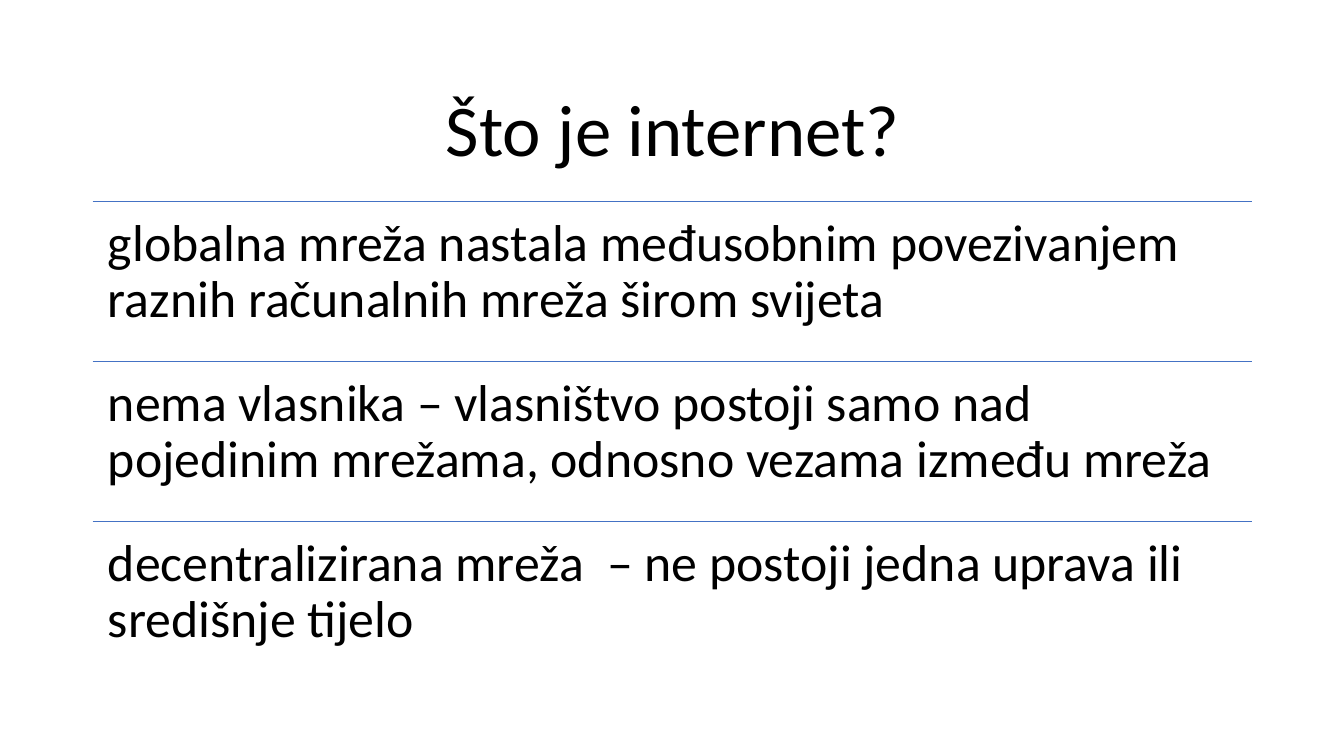
from lxml.etree import SubElement
from pptx import Presentation
from pptx.dml.color import RGBColor
from pptx.enum.shapes import MSO_CONNECTOR
from pptx.enum.text import MSO_ANCHOR, MSO_AUTO_SIZE, PP_ALIGN
from pptx.oxml.ns import qn
from pptx.util import Inches, Pt

FONT = "Calibri"
TEXT_COLOR = "000000"
RULE_COLOR = "4472C4"
LEFT, WIDTH = 0.92, 11.5

STATEMENTS = [
    "globalna mreža nastala međusobnim povezivanjem raznih računalnih mreža širom svijeta",
    "nema vlasnika – vlasništvo postoji samo nad pojedinim mrežama, odnosno vezama između mreža",
    "decentralizirana mreža  – ne postoji jedna uprava ili središnje tijelo",
]


def color(hex_string):
    return RGBColor.from_string(hex_string)


def format_paragraph(paragraph, size, alignment):
    paragraph.alignment = alignment
    paragraph.line_spacing = 0.9
    paragraph.font.name = FONT
    paragraph.font.size = Pt(size)
    paragraph.font.color.rgb = color(TEXT_COLOR)


def add_title(slide, text, left, top, width, height):
    title = slide.shapes.title
    title.left, title.top = Inches(left), Inches(top)
    title.width, title.height = Inches(width), Inches(height)
    frame = title.text_frame
    frame.text = text
    frame.auto_size = MSO_AUTO_SIZE.NONE
    frame.vertical_anchor = MSO_ANCHOR.MIDDLE
    format_paragraph(frame.paragraphs[0], 52, PP_ALIGN.CENTER)


def add_rule(slide, left, top, width):
    rule = slide.shapes.add_connector(
        MSO_CONNECTOR.STRAIGHT,
        Inches(left), Inches(top), Inches(left + width), Inches(top))
    rule.line.color.rgb = color(RULE_COLOR)
    rule.line.width = Pt(1)
    SubElement(rule._element.spPr, qn("a:effectLst"))


def add_statement(slide, text, left, top, width, height):
    box = slide.shapes.add_textbox(
        Inches(left), Inches(top), Inches(width), Inches(height))
    frame = box.text_frame
    frame.word_wrap = True
    frame.margin_left = frame.margin_right = Inches(0.15)
    frame.margin_top = frame.margin_bottom = Inches(0.15)
    frame.text = text
    format_paragraph(frame.paragraphs[0], 37, PP_ALIGN.LEFT)


def add_ruled_list(slide, statements, left, top, width, height):
    """Stack the statements in equal rows, each under a thin rule."""
    row_height = height / len(statements)
    for index, statement in enumerate(statements):
        row_top = top + index * row_height
        add_rule(slide, left, row_top, width)
        add_statement(slide, statement, left, row_top, width, row_height)


def main():
    presentation = Presentation()
    presentation.slide_width = Inches(13.33)
    presentation.slide_height = Inches(7.5)
    title_only = presentation.slide_layouts[5]
    slide = presentation.slides.add_slide(title_only)
    add_title(slide, "Što je internet?", LEFT, 0.7, WIDTH, 1.24)
    add_ruled_list(slide, STATEMENTS, LEFT, 2, WIDTH, 4.76)
    presentation.save("out.pptx")


if __name__ == "__main__":
    main()
